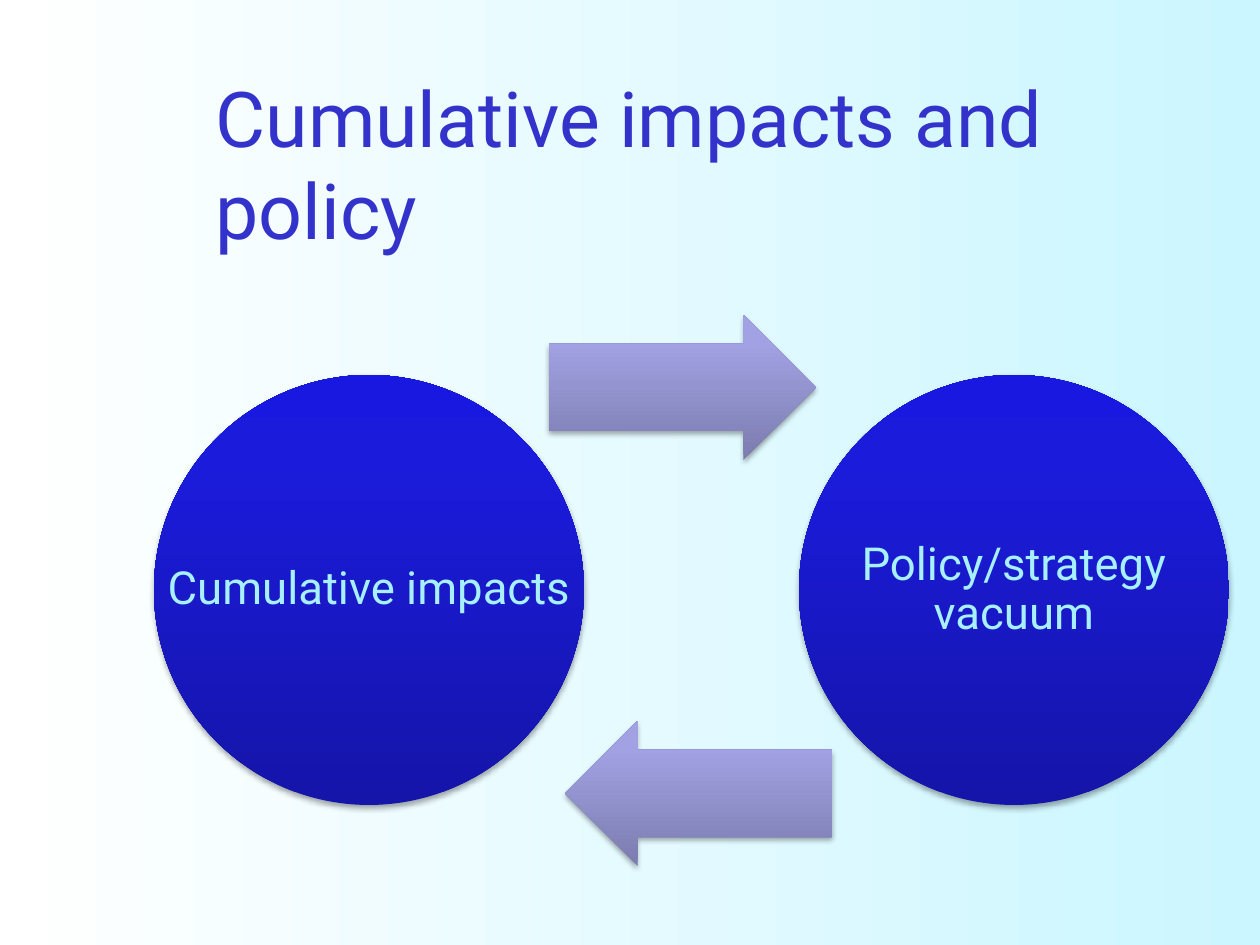
"""Build a slide showing the loop between cumulative impacts and policy."""
from copy import deepcopy
from dataclasses import dataclass

from lxml.etree import SubElement
from pptx import Presentation
from pptx.dml.color import RGBColor
from pptx.dml.fill import FillFormat
from pptx.enum.shapes import MSO_SHAPE as Preset
from pptx.enum.text import MSO_ANCHOR as Anchor, MSO_AUTO_SIZE as AutoSize, PP_ALIGN as Align
from pptx.oxml.ns import qn
from pptx.shapes.autoshape import Shape
from pptx.slide import Slide
from pptx.text.text import TextFrame
from pptx.util import Emu, Pt

PX_PER_INCH = 126
FONT = "Roboto"
WHITE = RGBColor(0xFF, 0xFF, 0xFF)
PALE_CYAN = RGBColor(0xCB, 0xF6, 0xFF)
TITLE_BLUE = RGBColor(0x33, 0x33, 0xCC)
LABEL_CYAN = RGBColor(0xA7, 0xF0, 0xFF)

Stops = tuple[tuple[float, RGBColor], ...]
BACKDROP: Stops = ((0, WHITE), (1, PALE_CYAN))
CIRCLE_BLUES: Stops = (
    (0, RGBColor(0x15, 0x15, 0xA9)),
    (0.8, RGBColor(0x1B, 0x1B, 0xDC)),
    (1, RGBColor(0x18, 0x18, 0xE1)),
)
ARROW_MAUVES: Stops = (
    (0, RGBColor(0x7C, 0x7C, 0xAF)),
    (0.8, RGBColor(0xA1, 0xA1, 0xE3)),
    (1, RGBColor(0xA0, 0xA0, 0xE5)),
)
CIRCLE_TOP, CIRCLE_SIZE = 375, 430
ARROW_WIDTH, ARROW_HEIGHT = 267, 145
LABEL_INSET = 5


@dataclass(frozen=True)
class Topic:
    label: str
    left: int


@dataclass(frozen=True)
class Arrow:
    left: int
    top: int
    rotation: int


TOPICS = (Topic("Cumulative impacts", 154), Topic("Policy/strategy vacuum", 799))
ARROWS = (Arrow(549, 315, 0), Arrow(565, 721, 180))


def px(length: int) -> Emu:
    """Turn pixels into EMU."""
    return Emu(round(length * 914400 / PX_PER_INCH))


def paint_gradient(fill: FillFormat, owner, stops: Stops, angle: int) -> None:
    """Apply a linear gradient that stays upright when its owner rotates."""
    fill.gradient()
    fill.gradient_angle = angle
    gradient = owner.find(".//" + qn("a:gradFill"))
    gradient.set("rotWithShape", "0")
    stop_list = gradient.find(qn("a:gsLst"))
    while len(stop_list) < len(stops):
        stop_list.append(deepcopy(stop_list[-1]))
    for stop, (position, color) in zip(fill.gradient_stops, stops):
        stop.position = position
        stop.color.rgb = color


def add_shadow(shape: Shape) -> None:
    """Give a shape a soft shadow that falls straight down."""
    shape.shadow.inherit = False
    effects = shape._element.spPr.find(qn("a:effectLst"))
    shadow = SubElement(effects, qn("a:outerShdw"), blurRad=str(Pt(3.1)),
                        dist=str(Pt(1.8)), dir="5400000", rotWithShape="0")
    color = SubElement(shadow, qn("a:srgbClr"), val="000000")
    SubElement(color, qn("a:alpha"), val="35000")


def add_solid(page: Slide, preset: Preset, left: int, top: int,
              width: int, height: int, stops: Stops) -> Shape:
    """Draw an unlined preset shape with a vertical gradient and a shadow."""
    shape = page.shapes.add_shape(preset, px(left), px(top), px(width), px(height))
    paint_gradient(shape.fill, shape._element, stops, 90)
    shape.line.fill.background()
    add_shadow(shape)
    return shape


def write(frame: TextFrame, text: str, size: int, color: RGBColor, align: Align) -> None:
    """Fill a frame with one wrapped, vertically centred paragraph."""
    frame.text = text
    frame.word_wrap = True
    frame.auto_size = AutoSize.NONE
    frame.vertical_anchor = Anchor.MIDDLE
    para = frame.paragraphs[0]
    para.alignment = align
    font = para.runs[0].font
    font.name, font.size, font.color.rgb = FONT, Pt(size), color


def add_topic(page: Slide, topic: Topic) -> None:
    """Draw a circle and the label spanning it."""
    area = (topic.left, CIRCLE_TOP, CIRCLE_SIZE, CIRCLE_SIZE)
    add_solid(page, Preset.OVAL, *area, CIRCLE_BLUES)
    frame = page.shapes.add_textbox(*map(px, area)).text_frame
    write(frame, topic.label, 26, LABEL_CYAN, Align.CENTER)
    frame.margin_left = frame.margin_right = px(LABEL_INSET)
    frame.margin_top = frame.margin_bottom = px(LABEL_INSET)
    frame.paragraphs[0].line_spacing = 0.9


def add_arrow(page: Slide, arrow: Arrow) -> None:
    """Draw a block arrow turned to its direction."""
    shape = add_solid(page, Preset.RIGHT_ARROW, arrow.left, arrow.top,
                      ARROW_WIDTH, ARROW_HEIGHT, ARROW_MAUVES)
    shape.adjustments[0] = 0.6
    shape.adjustments[1] = 0.5
    shape.rotation = arrow.rotation


def main() -> None:
    """Build and save the deck."""
    deck = Presentation()
    deck.slide_width, deck.slide_height = px(1260), px(945)
    page = deck.slides.add_slide(deck.slide_layouts.get_by_name("Title Only"))
    paint_gradient(page.background.fill, page._element, BACKDROP, 0)

    title = page.shapes.title
    title.left, title.top, title.width, title.height = map(px, (203, 84, 1057, 158))
    write(title.text_frame, "Cumulative impacts and policy", 44, TITLE_BLUE, Align.LEFT)

    for topic, arrow in zip(TOPICS, ARROWS):
        add_topic(page, topic)
        add_arrow(page, arrow)
    deck.save("out.pptx")


if __name__ == "__main__":
    main()
